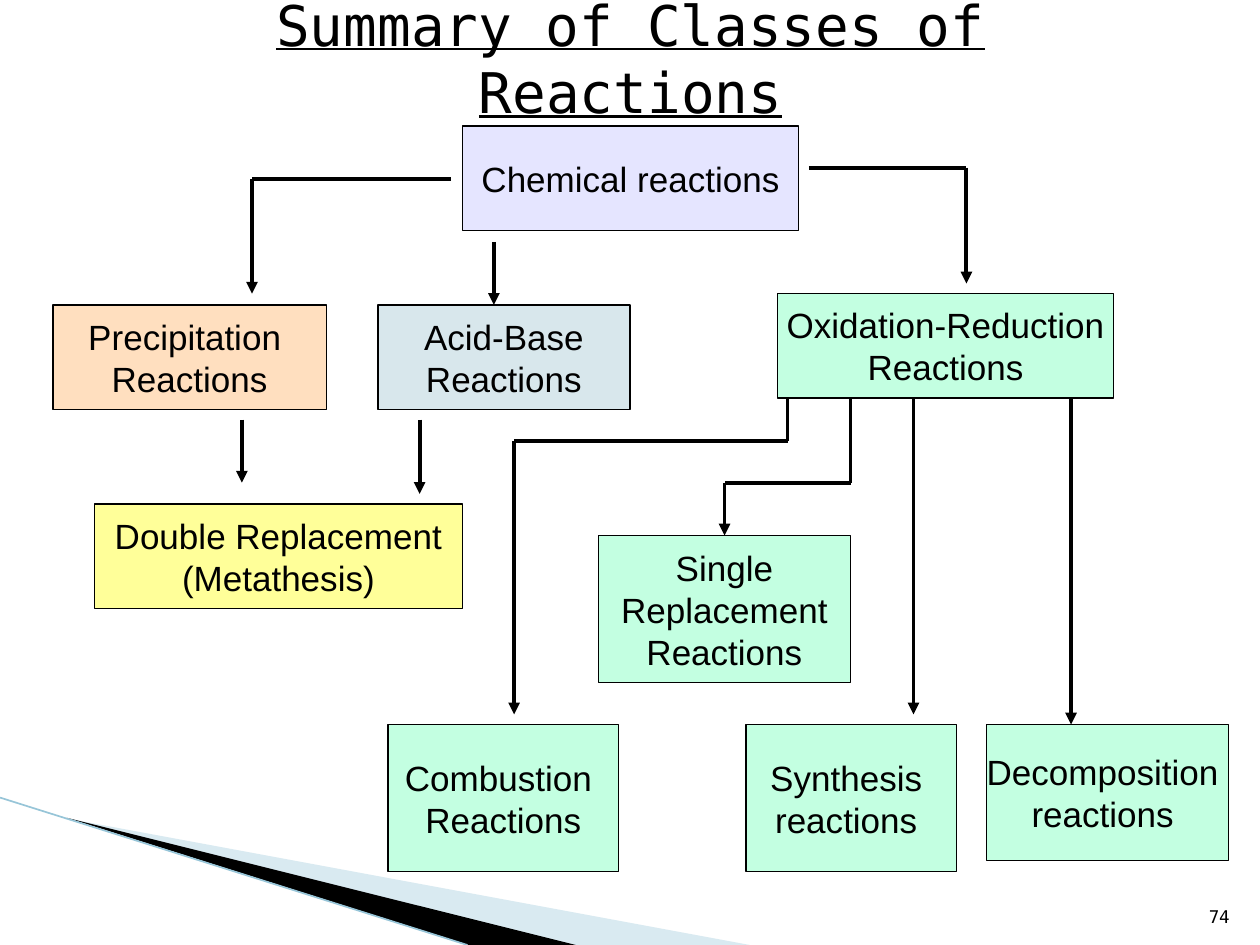
from dataclasses import dataclass
from itertools import pairwise

from lxml import etree
from pptx import Presentation
from pptx import util as u
from pptx.dml.color import RGBColor
from pptx.enum import shapes, text
from pptx.oxml import ns


@dataclass(frozen=True)
class Theme:
    ink: str = "000000"
    root: str = "E5E5FF"
    precipitation: str = "FFDFBF"
    acid_base: str = "D8E7EC"
    redox: str = "C3FFE1"
    double: str = "FFFF99"
    swoosh: str = "A0CBDC"
    swoosh_edge: str = "97C5D8"
    heading_font: str = "DejaVu Sans Mono"
    node_font: str = "Arial"
    title_size: float = 32
    node_size: float = 20
    number_size: float = 10
    border: float = 0.75
    arrow: float = 2.25
    edge: float = 0.95


@dataclass(frozen=True)
class Box:
    left: float
    top: float
    width: float
    height: float

    def inside(self, left, top, width, height):
        """Return a box offset from this one's corner."""
        return Box(self.left + left, self.top + top, width, height)

    def point(self, x, y):
        """Return slide lengths of a point offset from the corner."""
        return u.Inches(self.left + x), u.Inches(self.top + y)

    def lengths(self):
        """Return left, top, width and height as slide lengths."""
        return [u.Inches(v) for v in (self.left, self.top, self.width, self.height)]


THEME = Theme()

NODES = {
    "root": (["Chemical reactions"], THEME.root, (3.67, 0, 2.67, 0.83)),
    "precipitation": (["Precipitation ", "Reactions"], THEME.precipitation, (0.42, 1.42, 2.17, 0.83)),
    "acid_base": (["Acid-Base", "Reactions"], THEME.acid_base, (3, 1.42, 2, 0.83)),
    "redox": (["Oxidation-Reduction", "Reactions"], THEME.redox, (6.17, 1.33, 2.67, 0.83)),
    "double": (["Double Replacement (Metathesis)"], THEME.double, (0.75, 3, 2.92, 0.83)),
    "single": (["Single Replacement Reactions"], THEME.redox, (4.75, 3.25, 2, 1.17)),
    "combustion": (["Combustion ", "Reactions"], THEME.redox, (3.08, 4.75, 1.83, 1.17)),
    "synthesis": (["Synthesis ", "reactions "], THEME.redox, (5.92, 4.75, 1.67, 1.17)),
    "decomposition": (["Decomposition ", "reactions "], THEME.redox, (7.83, 4.75, 1.92, 1.08)),
}
WRAPPED = {"double", "single"}

ROUTES = [
    ([(3.58, 0.42), (2, 0.42), (2, 1.33)], None),
    ([(3.92, 0.92), (3.92, 1.42)], None),
    ([(6.42, 0.33), (7.67, 0.33), (7.67, 1.25)], None),
    ([(1.92, 2.33), (1.92, 2.83)], None),
    ([(3.33, 2.33), (3.33, 2.92)], None),
    ([(6.25, 2.17), (6.25, 2.5), (4.08, 2.5), (4.08, 4.67)], None),
    ([(6.75, 2.17), (6.75, 2.83), (5.75, 2.83), (5.75, 3.25)], "single"),
    ([(7.25, 2.17), (7.25, 4.67)], None),
    ([(8.5, 2.17), (8.5, 4.75)], None),
]


def write(para, words, font, size, align, underline=None):
    """Add one formatted run to an aligned paragraph."""
    para.alignment = align
    span = para.add_run()
    span.text = words
    span.font.name = font
    span.font.size = u.Pt(size)
    span.font.underline = underline
    span.font.color.rgb = RGBColor.from_string(THEME.ink)


def add_line(page, start, end, color, width, arrow=False):
    """Draw a flat straight line, with an arrowhead at its end if asked."""
    line = page.shapes.add_connector(shapes.MSO_CONNECTOR.STRAIGHT, *start, *end)
    line.line.color.rgb = RGBColor.from_string(color)
    line.line.width = u.Pt(width)
    if arrow:
        etree.SubElement(line.line._get_or_add_ln(), ns.qn("a:tailEnd"), type="triangle")
    etree.SubElement(line._element.spPr, ns.qn("a:effectLst"))
    return line


def add_wedge(page, box, points, color, opacity):
    """Draw one borderless wedge of the corner decoration."""
    corners = [box.point(x, y) for x, y in points]
    builder = page.shapes.build_freeform(*corners[0], scale=1.0)
    builder.add_line_segments(corners[1:], close=True)
    wedge = builder.convert_to_shape()
    wedge.shadow.inherit = False
    wedge.fill.solid()
    wedge.fill.fore_color.rgb = RGBColor.from_string(color)
    wedge.line.fill.background()
    if opacity < 100:
        tint = wedge._element.spPr.find(ns.qn("a:solidFill"))[0]
        etree.SubElement(tint, ns.qn("a:alpha"), val=str(opacity * 1000))


def add_swoosh(page, box):
    """Draw the wedges and edge line in the lower left corner."""
    add_wedge(page, box, [(0.55, 0.17), (5.95, 1.17), (4.56, 1.17)], THEME.swoosh, 40)
    add_wedge(page, box, [(0.53, 0.16), (4.57, 1.17), (3.72, 1.17)], THEME.ink, 100)
    add_line(page, box.point(0, 0), box.point(3.71, 1.17), THEME.swoosh_edge, THEME.edge)


def add_title(page, box):
    """Place the underlined slide title."""
    title = page.shapes.title
    title.left, title.top, title.width, title.height = box.lengths()
    frame = title.text_frame
    frame.auto_size = text.MSO_AUTO_SIZE.NONE
    frame.vertical_anchor = text.MSO_ANCHOR.MIDDLE
    write(frame.paragraphs[0], "Summary of Classes of Reactions", THEME.heading_font,
          THEME.title_size, text.PP_ALIGN.CENTER, True)


def add_node(page, box, lines, color, wrap):
    """Draw one labelled box of the tree."""
    node = page.shapes.add_shape(shapes.MSO_SHAPE.RECTANGLE, *box.lengths())
    node.shadow.inherit = False
    node.fill.solid()
    node.fill.fore_color.rgb = RGBColor.from_string(color)
    node.line.color.rgb = RGBColor.from_string(THEME.ink)
    node.line.width = u.Pt(THEME.border)
    frame = node.text_frame
    frame.word_wrap = wrap
    frame.vertical_anchor = text.MSO_ANCHOR.MIDDLE
    for index, words in enumerate(lines):
        para = frame.add_paragraph() if index else frame.paragraphs[0]
        write(para, words, THEME.node_font, THEME.node_size, text.PP_ALIGN.CENTER)
    return node


def add_tree(page, box):
    """Draw the reaction classes and the routes between them."""
    nodes = {name: add_node(page, box.inside(*place), lines, color, name in WRAPPED)
             for name, (lines, color, place) in NODES.items()}
    for points, target in ROUTES:
        for start, end in pairwise(points):
            line = add_line(page, box.point(*start), box.point(*end),
                            THEME.ink, THEME.arrow, end == points[-1])
        if target:
            line.end_connect(nodes[target], 0)


def add_number(page, box):
    """Place the page number."""
    frame = page.shapes.add_textbox(*box.lengths()).text_frame
    frame.word_wrap = True
    frame.vertical_anchor = text.MSO_ANCHOR.BOTTOM
    frame.margin_left = frame.margin_right = 0
    write(frame.paragraphs[0], "74", THEME.heading_font, THEME.number_size, text.PP_ALIGN.RIGHT)


def main():
    """Build and save the slide."""
    deck = Presentation()
    deck.slide_width, deck.slide_height = u.Inches(10), u.Inches(7.5)
    page = deck.slides.add_slide(deck.slide_layouts[5])
    add_swoosh(page, Box(0, 6.33, 5.95, 1.17))
    add_title(page, Box(0.92, 0, 8.17, 0.92))
    add_tree(page, Box(0, 1, 10, 5.92))
    add_number(page, Box(9.36, 7.01, 0.4, 0.4))
    deck.save("out.pptx")


if __name__ == "__main__":
    main()
